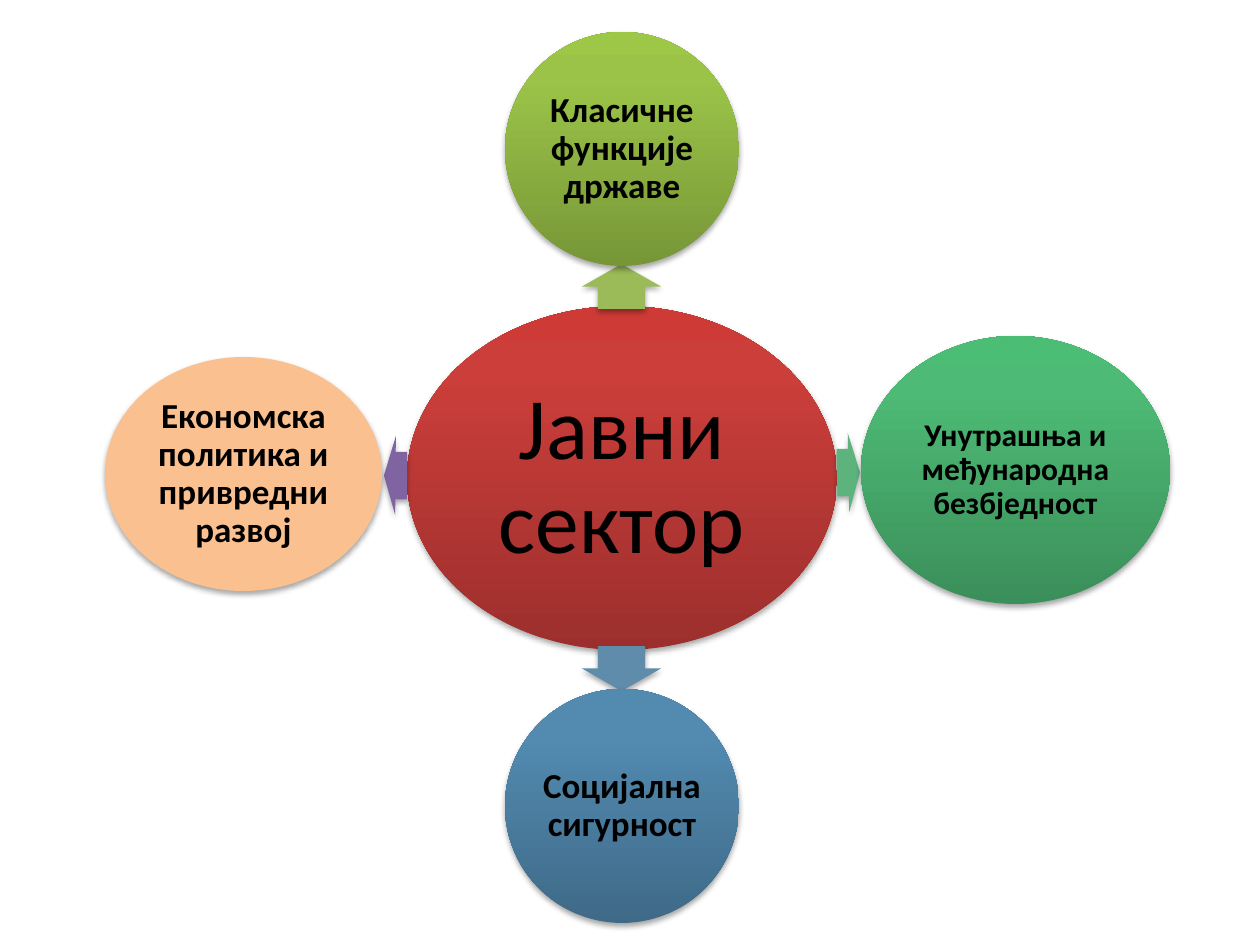
from copy import deepcopy
from dataclasses import dataclass

from lxml.etree import SubElement
from pptx import Presentation
from pptx.dml.color import RGBColor
from pptx.enum.shapes import MSO_SHAPE
from pptx.enum.text import MSO_ANCHOR, PP_ALIGN
from pptx.oxml.ns import qn
from pptx.util import Emu, Inches, Pt

PX_PER_INCH = 126
GRADIENT_STOPS = (0, 0.8, 1)
COLOURS = {
    "text": "000000",
    "shadow": "000000",
    "red": ("9C2F2D", "CB3E3A", "CE3B37"),
    "lime": ("779737", "9BC348", "9DC746"),
    "green": ("3B8F5A", "4DBA75", "4BBD75"),
    "blue": ("3F6A88", "528AB0", "518BB3"),
    "peach": "FAC090",
    "lime arrow": "9BBB59",
    "green arrow": "5CB37C",
    "blue arrow": "608CAB",
    "purple arrow": "8064A2",
}


@dataclass(frozen=True)
class Box:
    left: int
    top: int
    width: int
    height: int


@dataclass(frozen=True)
class Bubble:
    text: str
    box: Box
    colour: str
    size: int = 20
    bold: bool = True
    inset: int = 2


@dataclass(frozen=True)
class Arrow:
    box: Box
    rotation: float
    colour: str


CENTRE = Bubble("Јавни сектор", Box(407, 306, 430, 344), "red", 50, False, 9)
BRANCHES = (
    (Arrow(Box(599, 247, 45, 79), 270, "lime arrow"),
     Bubble("Класичне функције државе", Box(505, 32, 234, 234), "lime")),
    (Arrow(Box(837, 433, 23, 79), 358.9, "green arrow"),
     Bubble("Унутрашња и међународна безбједност", Box(861, 336, 309, 268), "green", 18)),
    (Arrow(Box(599, 629, 45, 79), 90, "blue arrow"),
     Bubble("Социјална сигурност", Box(505, 689, 234, 234), "blue")),
    (Arrow(Box(384, 436, 23, 79), 180.5, "purple arrow"),
     Bubble("Економска политика и привредни развој", Box(105, 357, 277, 234), "peach")),
)


def px(length: int) -> Emu:
    return Emu(round(length * 914400 / PX_PER_INCH))


def add_shadow(shape) -> None:
    shape.shadow.inherit = False
    effects = shape._element.spPr.find(qn("a:effectLst"))
    shadow = SubElement(effects, qn("a:outerShdw"), blurRad="40000", dist="23000",
                        dir="5400000", rotWithShape="0")
    colour = SubElement(shadow, qn("a:srgbClr"), val=COLOURS["shadow"])
    SubElement(colour, qn("a:alpha"), val="35000")


def fill_shape(shape, colour: str | tuple[str, ...]) -> None:
    """Fill with one colour, or with a gradient running from bottom to top."""
    if isinstance(colour, str):
        shape.fill.solid()
        shape.fill.fore_color.rgb = RGBColor.from_string(colour)
        return
    shape.fill.gradient()
    shape.fill.gradient_angle = 90
    stop_list = shape._element.spPr.find(qn("a:gradFill")).find(qn("a:gsLst"))
    stop_list.append(deepcopy(stop_list[-1]))
    for stop, position, value in zip(shape.fill.gradient_stops, GRADIENT_STOPS, colour):
        stop.position = position
        stop.color.rgb = RGBColor.from_string(value)


def add_figure(page, kind: MSO_SHAPE, box: Box, colour: str):
    shape = page.shapes.add_shape(kind, px(box.left), px(box.top), px(box.width), px(box.height))
    fill_shape(shape, COLOURS[colour])
    shape.line.fill.background()
    add_shadow(shape)
    return shape


def add_bubble(page, bubble: Bubble) -> None:
    shape = add_figure(page, MSO_SHAPE.OVAL, bubble.box, bubble.colour)
    frame = shape.text_frame
    frame.word_wrap = True
    frame.vertical_anchor = MSO_ANCHOR.MIDDLE
    frame.margin_left = frame.margin_right = px(bubble.inset)
    frame.margin_top = frame.margin_bottom = px(bubble.inset)
    para = frame.paragraphs[0]
    para.text = bubble.text
    para.alignment = PP_ALIGN.CENTER
    para.line_spacing = 0.9
    para.font.name = "Calibri"
    para.font.size = Pt(bubble.size)
    para.font.bold = bubble.bold
    para.font.color.rgb = RGBColor.from_string(COLOURS["text"])


def add_arrow(page, arrow: Arrow) -> None:
    shape = add_figure(page, MSO_SHAPE.RIGHT_ARROW, arrow.box, arrow.colour)
    shape.adjustments[0] = 0.6
    shape.adjustments[1] = 0.5
    shape.rotation = arrow.rotation


def main() -> None:
    deck = Presentation()
    deck.slide_width, deck.slide_height = Inches(10), Inches(7.5)
    page = deck.slides.add_slide(deck.slide_layouts[6])
    add_bubble(page, CENTRE)
    for arrow, bubble in BRANCHES:
        add_arrow(page, arrow)
        add_bubble(page, bubble)
    deck.save("out.pptx")


if __name__ == "__main__":
    main()
